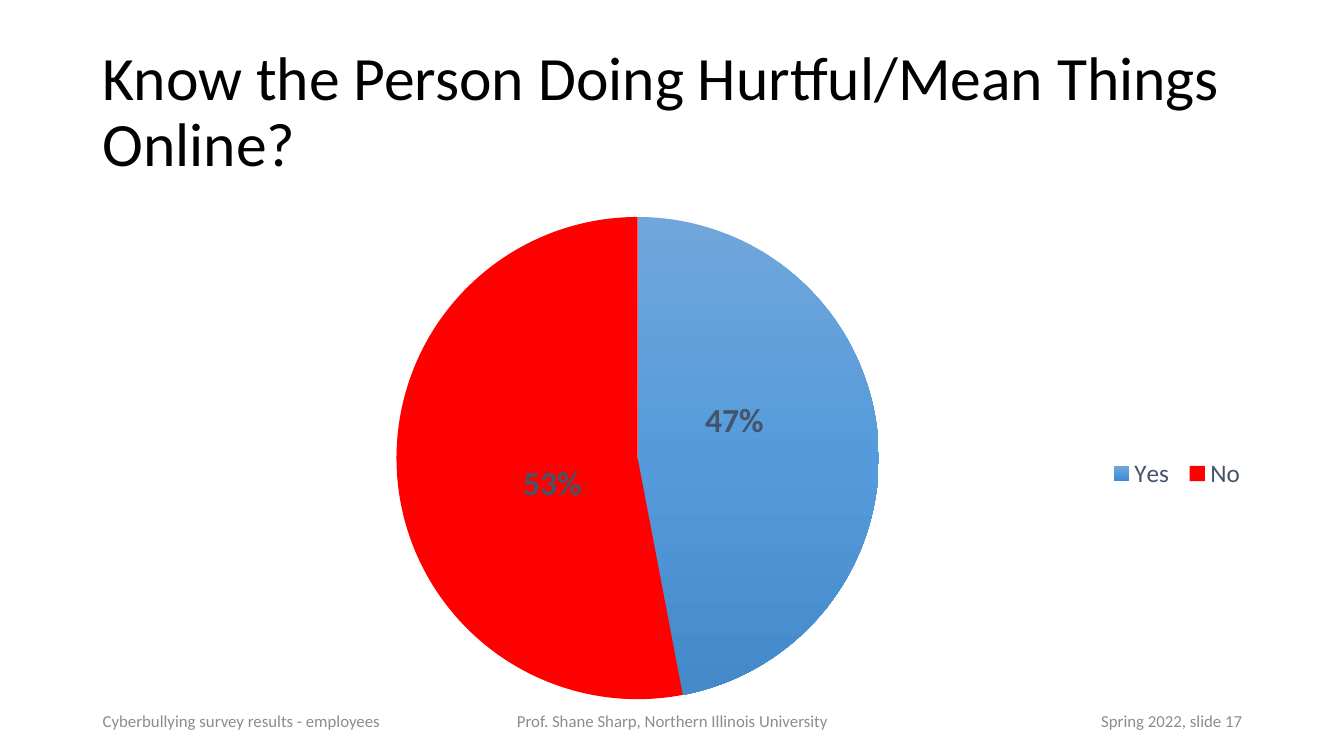
from copy import deepcopy
from dataclasses import dataclass

from pptx import Presentation
from pptx.chart.data import CategoryChartData
from pptx.dml.color import RGBColor
from pptx.enum.chart import XL_CHART_TYPE, XL_LABEL_POSITION, XL_LEGEND_POSITION
from pptx.enum.text import MSO_ANCHOR, PP_ALIGN
from pptx.oxml import parse_xml
from pptx.oxml.ns import nsdecls
from pptx.util import Pt

SCALE = 9144  # EMU in one px, at 100 px to the inch


@dataclass(frozen=True)
class Theme:
    font: str = "Calibri"
    title_color: str = "000000"
    footer_color: str = "8C8C8C"
    chart_text: str = "44546A"
    yes_gradient: tuple = ((0, "71A6DB"), (0.5, "559BDB"), (1, "448ACA"))
    no_color: str = "FF0000"
    title_size: int = 44
    label_size: int = 24
    legend_size: int = 18
    footer_size: int = 12


THEME = Theme()


def px(*lengths):
    return [length * SCALE for length in lengths]


def style_font(font, size, color, bold=False):
    font.name = THEME.font
    font.size = Pt(size)
    font.bold = bold
    font.color.rgb = RGBColor.from_string(color)


def add_text(page, bounds, text, size, color, align=PP_ALIGN.LEFT, spacing=1.0):
    box = page.shapes.add_textbox(*px(*bounds))
    frame = box.text_frame
    frame.word_wrap = True
    frame.vertical_anchor = MSO_ANCHOR.MIDDLE
    para = frame.paragraphs[0]
    para.text = text
    para.alignment = align
    para.line_spacing = spacing
    style_font(para.font, size, color)


def manual_layout(**values):
    """Build a chart layout from fractions of the chart area."""
    modes = '<c:xMode val="edge"/><c:yMode val="edge"/>' if "w" in values else ""
    fields = "".join(f'<c:{name} val="{value}"/>' for name, value in values.items())
    return parse_xml(
        f'<c:layout {nsdecls("c")}><c:manualLayout>{modes}{fields}'
        "</c:manualLayout></c:layout>"
    )


def fill_gradient(point, stops):
    fill = point.format.fill
    fill.gradient()
    fill.gradient_angle = 270
    first = fill.gradient_stops[0]._gs
    first.addnext(deepcopy(first))
    for stop, (position, color) in zip(fill.gradient_stops, stops):
        stop.position = position
        stop.color.rgb = RGBColor.from_string(color)


def label_point(point, x, y):
    """Show the share as a percentage, shifted from the slice centre."""
    data_label = point.data_label
    style_font(data_label.font, THEME.label_size, THEME.chart_text, bold=True)
    data_label.position = XL_LABEL_POSITION.CENTER
    element = data_label._dLbl
    element.xpath("c:idx")[0].addnext(manual_layout(x=x, y=y))
    for name, shown in (("showVal", 0), ("showPercent", 1)):
        element.xpath(f"c:{name}")[0].set("val", str(shown))


def add_answer_pie(page, bounds):
    data = CategoryChartData()
    data.categories = ["Yes", "No"]
    data.add_series("Series 1", (47, 53))
    chart = page.shapes.add_chart(XL_CHART_TYPE.PIE, *px(*bounds), data).chart
    chart.has_title = False
    style_font(chart.font, 10, THEME.title_color)

    # Slices and their labels
    plot = chart.plots[0]
    plot.vary_by_categories = True
    yes, no = (plot.series[0].points[index] for index in range(2))
    fill_gradient(yes, THEME.yes_gradient)
    no.format.fill.solid()
    no.format.fill.fore_color.rgb = RGBColor.from_string(THEME.no_color)
    label_point(yes, -0.02, -0.05)
    label_point(no, 0.03, 0.03)

    # Legend in one row at the right
    chart.has_legend = True
    legend = chart.legend
    legend.position = XL_LEGEND_POSITION.RIGHT
    legend.include_in_layout = False
    style_font(legend.font, THEME.legend_size, THEME.chart_text)
    place(legend._element, "c:legendPos", manual_layout(x=0.87, y=0.5, w=0.13, h=0.06))

    # Pie circle
    area = chart._chartSpace.xpath("c:chart/c:plotArea")[0]
    for old in area.xpath("c:layout"):
        area.remove(old)
    layout = manual_layout(x=0.26, y=0.03, w=0.42, h=0.94)
    layout[0].insert(0, parse_xml(f'<c:layoutTarget {nsdecls("c")} val="inner"/>'))
    area.insert(0, layout)


def place(parent, before, layout):
    """Put the layout after the named child, in place of any earlier one."""
    for old in parent.xpath("c:layout"):
        parent.remove(old)
    parent.xpath(before)[0].addnext(layout)


def main():
    deck = Presentation()
    deck.slide_width, deck.slide_height = px(1333, 750)
    page = deck.slides.add_slide(deck.slide_layouts[6])

    # Title
    add_text(page, (92, 40, 1150, 145),
             "Know the Person Doing Hurtful/Mean Things Online?",
             THEME.title_size, THEME.title_color, spacing=0.9)

    # Chart
    add_answer_pie(page, (92, 200, 1150, 509))

    # Footer
    footers = (
        (442, 450, "Prof. Shane Sharp, Northern Illinois University", PP_ALIGN.CENTER),
        (92, 300, "Cyberbullying survey results - employees", PP_ALIGN.LEFT),
        (942, 300, "Spring 2022, slide 17", PP_ALIGN.RIGHT),
    )
    for left, width, text, align in footers:
        add_text(page, (left, 695, width, 40), text,
                 THEME.footer_size, THEME.footer_color, align)

    deck.save("out.pptx")


if __name__ == "__main__":
    main()
